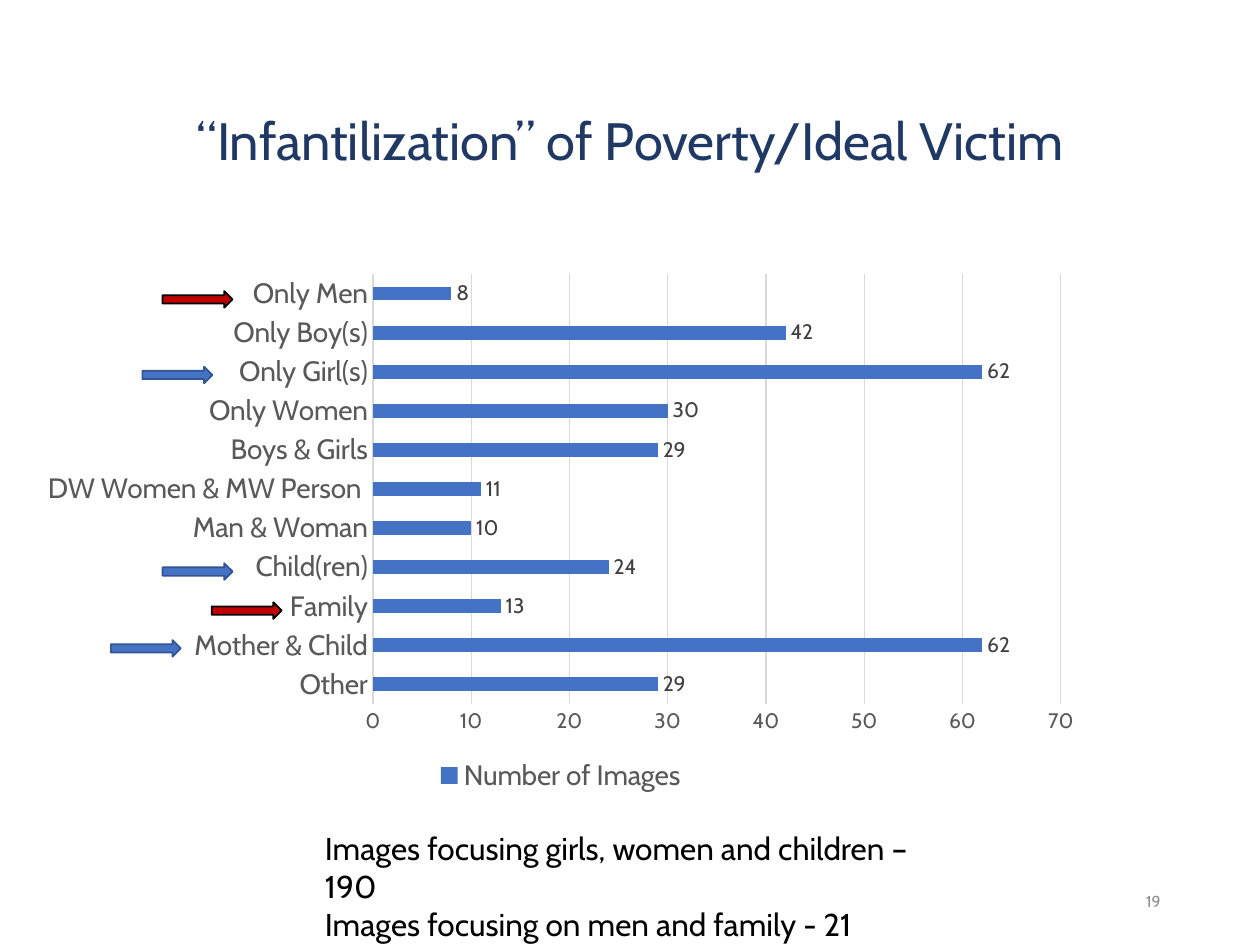
from pptx import Presentation
from pptx.chart.data import CategoryChartData as ChartData
from pptx.dml.color import RGBColor as RGB
from pptx.enum.chart import (
    XL_CHART_TYPE as Kind,
    XL_LABEL_POSITION as Spot,
    XL_LEGEND_POSITION as Side,
    XL_TICK_MARK as Tick,
)
from pptx.enum.shapes import MSO_SHAPE as Shape
from pptx.enum.text import MSO_ANCHOR as Anchor, PP_ALIGN as Align
from pptx.util import Pt

FACE = "Cabin"
BLUE, RED, GREY, RULE = "4472C4", "C00000", "595959", "D9D9D9"

COUNTS = [
    ("Other", 29), ("Mother & Child", 62), ("Family", 13),
    ("Child(ren)", 24), ("Man & Woman", 10), ("DW Women & MW Person ", 11),
    ("Boys & Girls", 29), ("Only Women", 30), ("Only Girl(s)", 62),
    ("Only Boy(s)", 42), ("Only Men", 8),
]

# Left, top, fill and outline of each arrow
ARROWS = [
    (81.36, 209.52, BLUE, "325491"),
    (92.88, 321.84, BLUE, "325491"),
    (63.36, 365.76, BLUE, "325491"),
    (92.88, 166.32, RED, "000000"),
    (120.96, 344.16, RED, "000000"),
]


def color(code):
    return RGB.from_string(code)


def style(font, size, code):
    font.name = FACE
    font.size = Pt(size)
    font.bold = False
    font.color.rgb = color(code)


def place(shape, left, top, width, height):
    shape.left, shape.top = Pt(left), Pt(top)
    shape.width, shape.height = Pt(width), Pt(height)


def write(frame, lines, size, code, align=Align.LEFT, anchor=Anchor.TOP):
    frame.word_wrap = True
    frame.vertical_anchor = anchor
    for i, line in enumerate(lines):
        para = frame.add_paragraph() if i else frame.paragraphs[0]
        para.alignment = align
        run = para.add_run()
        run.text = line
        style(run.font, size, code)


def add_title(slide, text):
    title = slide.shapes.title
    place(title, 49.7, 58.3, 620.6, 47.5)
    write(title.text_frame, [text], 30, "203864", Align.CENTER, Anchor.MIDDLE)
    title.text_frame.paragraphs[0].line_spacing = 0.9


def add_text(slide, box, lines, size, code, **opts):
    shape = slide.shapes.add_textbox(*map(Pt, box))
    write(shape.text_frame, lines, size, code, **opts)


def add_arrow(slide, left, top, fill, edge):
    arrow = slide.shapes.add_shape(
        Shape.RIGHT_ARROW, Pt(left), Pt(top), Pt(40), Pt(9.5))
    arrow.shadow.inherit = False
    arrow.fill.solid()
    arrow.fill.fore_color.rgb = color(fill)
    arrow.line.color.rgb = color(edge)
    arrow.line.width = Pt(1)


def rule(line):
    line.color.rgb = color(RULE)
    line.width = Pt(0.75)


def add_bars(slide, box):
    data = ChartData()
    data.categories = [name for name, _ in COUNTS]
    data.add_series("Number of Images", [count for _, count in COUNTS])
    chart = slide.shapes.add_chart(
        Kind.BAR_CLUSTERED, *map(Pt, box), data).chart
    chart.has_title = False
    style(chart.font, 10, "000000")

    # Axes
    cats, vals = chart.category_axis, chart.value_axis
    for axis, size in ((cats, 16), (vals, 12)):
        axis.major_tick_mark = axis.minor_tick_mark = Tick.NONE
        style(axis.tick_labels.font, size, GREY)
    rule(cats.format.line)
    vals.format.line.fill.background()
    vals.minimum_scale, vals.maximum_scale = 0, 70
    vals.major_unit = 10
    vals.has_major_gridlines = True
    rule(vals.major_gridlines.format.line)

    # Legend
    chart.has_legend = True
    chart.legend.position = Side.BOTTOM
    chart.legend.include_in_layout = False
    style(chart.legend.font, 16, GREY)

    # Bars and their labels
    plot = chart.plots[0]
    plot.gap_width = 182
    plot.vary_by_categories = False
    bars = plot.series[0]
    bars.invert_if_negative = False
    bars.format.fill.solid()
    bars.format.fill.fore_color.rgb = color(BLUE)
    labels = bars.data_labels
    labels.show_value = True
    labels.position = Spot.OUTSIDE_END
    style(labels.font, 12, "404040")


def main():
    deck = Presentation()
    deck.slide_width, deck.slide_height = Pt(720), Pt(540)
    slide = deck.slides.add_slide(deck.slide_layouts[5])

    add_title(slide, "“Infantilization” of Poverty/Ideal Victim")
    add_text(slide, (508.3, 500.4, 162, 28.8), ["19"], 9, "8C8C8C",
             align=Align.RIGHT, anchor=Anchor.MIDDLE)
    add_bars(slide, (15.1, 150.5, 610.6, 305.3))
    for arrow in ARROWS:
        add_arrow(slide, *arrow)

    # Totals below the chart
    add_text(slide, (178.6, 470.2, 363.6, 51.1), [
        "Images focusing girls, women and children – 190",
        "Images focusing on men and family - 21",
    ], 18, "000000")

    deck.save("out.pptx")


if __name__ == "__main__":
    main()
